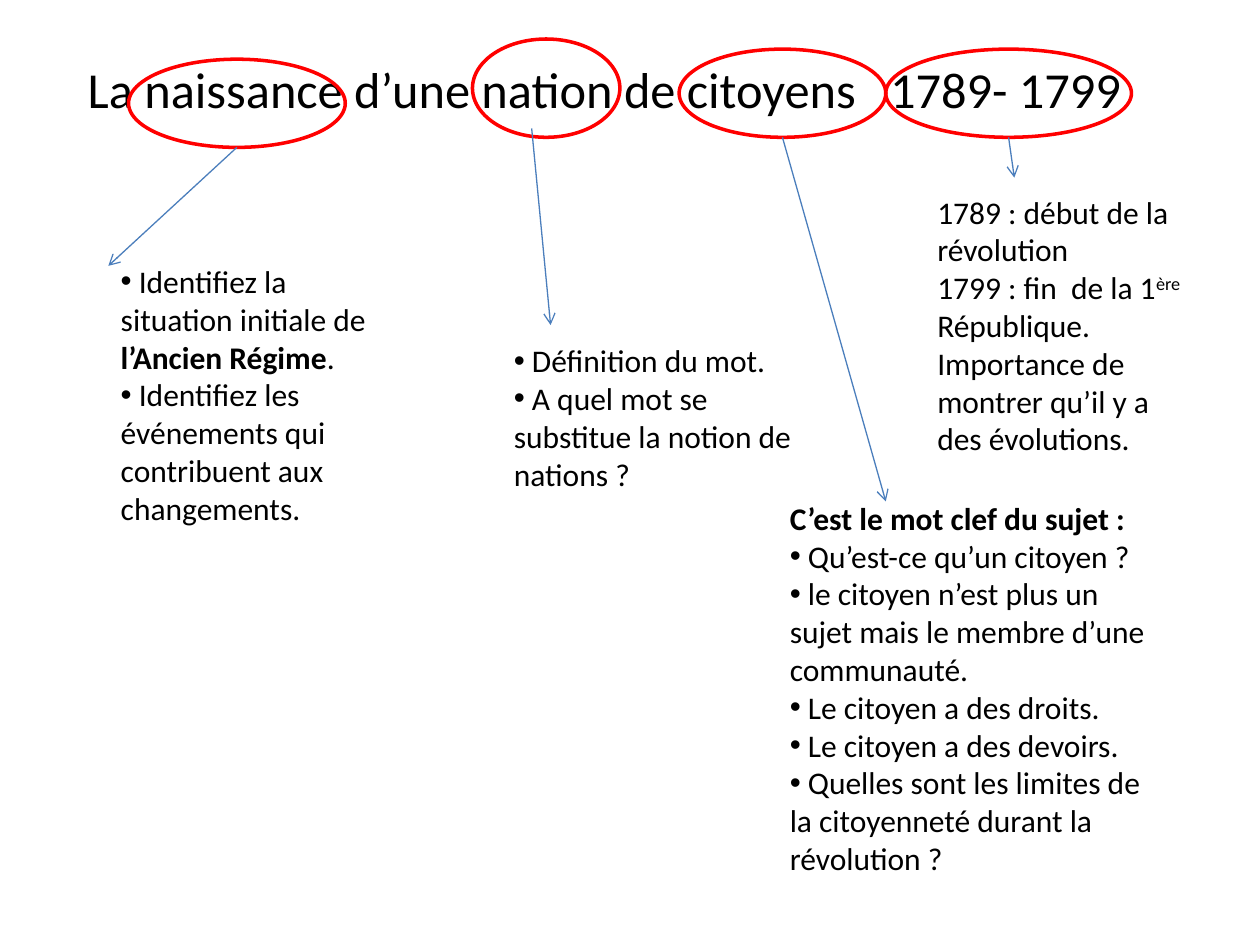
from dataclasses import dataclass

from lxml import etree
from pptx import Presentation
from pptx import util as u
from pptx.dml.color import RGBColor
from pptx.enum import shapes, text
from pptx.oxml.ns import qn


@dataclass(frozen=True)
class Theme:
    font: str = "Calibri"
    ink: RGBColor = RGBColor(0, 0, 0)
    ring: RGBColor = RGBColor(0xFF, 0, 0)
    arrow: RGBColor = RGBColor(0x4B, 0x7E, 0xBC)
    title: float = 28.8
    body: float = 18
    ring_width: float = 2
    arrow_width: float = 0.75


T = Theme()
W, H = 10, 7.5
TITLE = "La naissance d’une nation de citoyens   1789- 1799"
TITLE_BOX = (0.55, 0.31, 8.5, 0.78)

# Each key word: its ring, arrow (start None = bottom of ring), note box,
# and note paragraphs as (bulleted, [(text, style), ...])
KEYWORDS = [
    dict(ring=(1.02, 0.47, 1.72, 0.7), start=None, end=(0.86, 2.11),
         box=(0.86, 2.03, 2.42, 2.22), note=[
             (True, [(" Identifiez la situation initiale de ", ""),
                     ("l’Ancien Régime", "bold"), (".", "")]),
             (True, [(" ", "bold"),
                     ("Identifiez les événements qui contribuent aux changements.", "")]),
         ]),
    dict(ring=(3.75, 0.31, 1.17, 0.78), start=(4.22, 1.02), end=(4.37, 2.58),
         box=(3.98, 2.66, 2.58, 1.31), note=[
             (True, [(" Définition du mot.", "")]),
             (True, [(" A quel mot se substitue la notion de nations ?", "")]),
         ]),
    dict(ring=(5.39, 0.39, 1.64, 0.7), start=None, end=(7.03, 3.98),
         box=(6.17, 3.91, 3.13, 3.13), note=[
             (False, [("C’est le mot clef du sujet :", "bold")]),
             (True, [(" Qu’est-ce qu’un citoyen ?", "")]),
             (True, [(" le citoyen n’est plus un  sujet mais le membre d’une communauté.", "")]),
             (True, [(" Le citoyen a des droits.", "")]),
             (True, [(" Le citoyen a des devoirs.", "")]),
             (True, [(" Quelles sont les limites de la citoyenneté durant la révolution ?", "")]),
         ]),
    dict(ring=(7.03, 0.39, 1.95, 0.7), start=None, end=(8.05, 1.41),
         box=(7.34, 1.48, 2.19, 2.22), note=[
             (False, [("1789 : début de la révolution", "")]),
             (False, [("1799 : fin  de la 1", ""), ("ère", "super"), (" République.", "")]),
             (False, [("Importance de montrer qu’il y a des évolutions.", "")]),
         ]),
]


def inches(values):
    return [u.Inches(v) for v in values]


def add_run(p, content, size, style=""):
    r = p.add_run()
    r.text = content
    r.font.name, r.font.size = T.font, u.Pt(size)
    r.font.color.rgb = T.ink
    r.font.bold = style == "bold"
    if style == "super":
        r._r.get_or_add_rPr().set("baseline", "30000")


def add_bullet(p):
    pPr = p._p.get_or_add_pPr()
    etree.SubElement(pPr, qn("a:buFont")).set("typeface", "Arial")
    etree.SubElement(pPr, qn("a:buChar")).set("char", "•")


def add_title(s):
    sp = s.shapes.title
    sp.left, sp.top, sp.width, sp.height = inches(TITLE_BOX)
    tf = sp.text_frame
    tf.auto_size = text.MSO_AUTO_SIZE.NONE
    tf.vertical_anchor = text.MSO_ANCHOR.MIDDLE
    p = tf.paragraphs[0]
    p.alignment = text.PP_ALIGN.CENTER
    add_run(p, TITLE, T.title)


def add_ring(s, box):
    sp = s.shapes.add_shape(shapes.MSO_SHAPE.OVAL, *inches(box))
    sp.shadow.inherit = False
    sp.fill.background()
    sp.line.color.rgb, sp.line.width = T.ring, u.Pt(T.ring_width)


def add_arrow(s, start, end):
    c = s.shapes.add_connector(shapes.MSO_CONNECTOR.STRAIGHT, *inches(start + end))
    c.line.color.rgb, c.line.width = T.arrow, u.Pt(T.arrow_width)
    etree.SubElement(c.line._get_or_add_ln(), qn("a:tailEnd")).set("type", "arrow")
    etree.SubElement(c._element.spPr, qn("a:effectLst"))


def add_note(s, box, note):
    tf = s.shapes.add_textbox(*inches(box)).text_frame
    tf.word_wrap = True
    tf.auto_size = text.MSO_AUTO_SIZE.SHAPE_TO_FIT_TEXT
    for i, (bulleted, runs) in enumerate(note):
        p = tf.add_paragraph() if i else tf.paragraphs[0]
        if bulleted:
            add_bullet(p)
        for content, style in runs:
            add_run(p, content, T.body, style)


def main():
    prs = Presentation()
    prs.slide_width, prs.slide_height = inches((W, H))
    s = prs.slides.add_slide(prs.slide_layouts[5])
    add_title(s)

    # Ring, arrow and note for each key word
    for word in KEYWORDS:
        left, top, width, height = word["ring"]
        add_ring(s, word["ring"])
        add_arrow(s, word["start"] or (left + width / 2, top + height), word["end"])
        add_note(s, word["box"], word["note"])

    prs.save("out.pptx")


if __name__ == "__main__":
    main()
